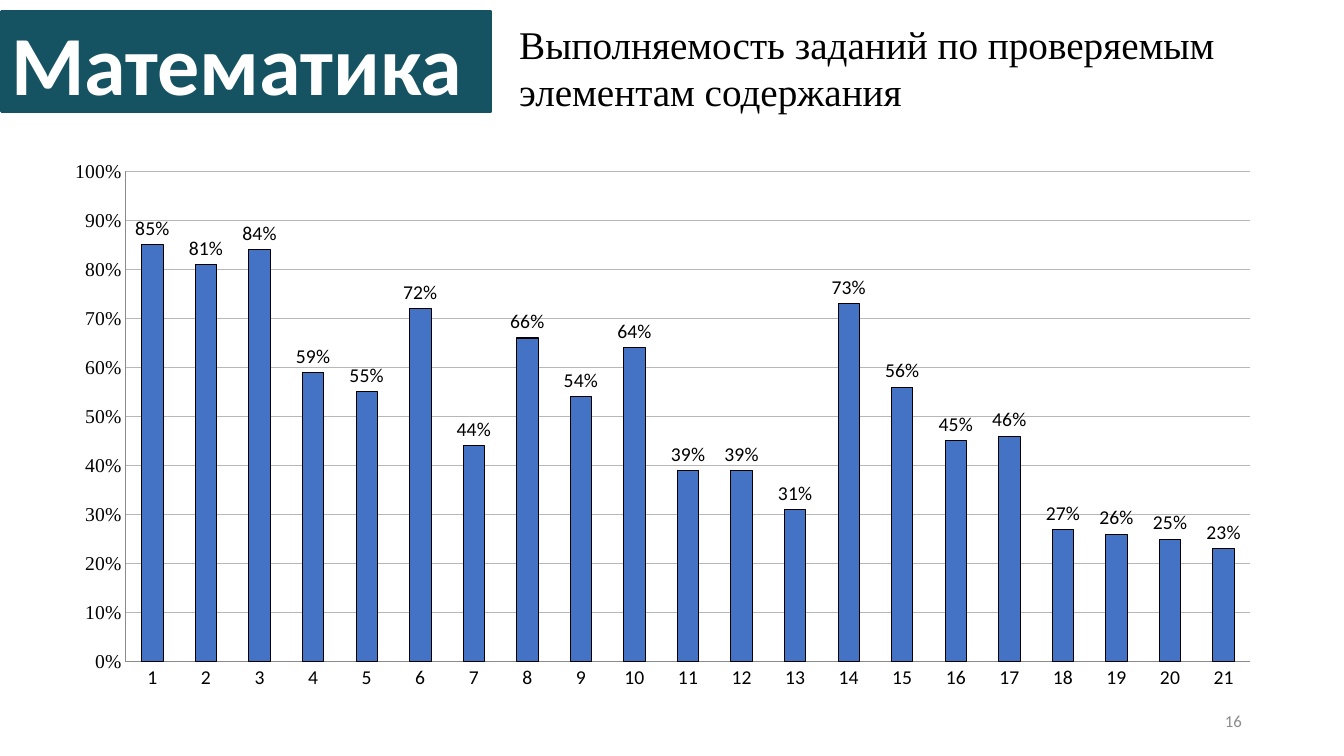
from lxml.etree import SubElement
from pptx import Presentation
from pptx.chart.data import CategoryChartData
from pptx.dml.color import RGBColor
from pptx.enum.chart import XL_CHART_TYPE, XL_LABEL_POSITION, XL_TICK_MARK
from pptx.enum.shapes import MSO_SHAPE
from pptx.enum.text import MSO_ANCHOR, MSO_AUTO_SIZE, PP_ALIGN
from pptx.oxml.ns import qn
from pptx.util import Cm, Pt

COLORS = {
    "black": "000000",
    "white": "FFFFFF",
    "teal": "155262",
    "bar": "4472C4",
    "grid": "B7B7B7",
    "axis": "8B8B8B",
    "number": "8C8C8C",
}
SANS = "Calibri"
SERIF = "Times New Roman"
RESULTS = [0.85, 0.81, 0.84, 0.59, 0.55, 0.72, 0.44, 0.66, 0.54, 0.64, 0.39,
           0.39, 0.31, 0.73, 0.56, 0.45, 0.46, 0.27, 0.26, 0.25, 0.23]
PLOT_AREA = {"x": 0.06, "y": 0.04, "w": 0.92, "h": 0.89}


def color(name):
    return RGBColor.from_string(COLORS[name])


def set_attributes(target, values):
    for name, value in values.items():
        setattr(target, name, value)


def format_font(font, size, family, color_name="black", bold=False):
    set_attributes(font, {"size": Pt(size), "name": family, "bold": bold})
    font.color.rgb = color(color_name)


def format_line(line, color_name, width):
    line.color.rgb = color(color_name)
    line.width = Pt(width)


def place(shape, left, top, width, height):
    set_attributes(shape, {"left": Cm(left), "top": Cm(top),
                           "width": Cm(width), "height": Cm(height)})


def write_text(shape, lines, size, family, color_name="black", bold=False,
               alignment=PP_ALIGN.LEFT, anchor=MSO_ANCHOR.MIDDLE):
    frame = shape.text_frame
    frame.text = "\n".join(lines)
    set_attributes(frame, {"word_wrap": True, "vertical_anchor": anchor,
                           "auto_size": MSO_AUTO_SIZE.NONE})
    for paragraph in frame.paragraphs:
        set_attributes(paragraph, {"alignment": alignment, "line_spacing": 1.0,
                                   "space_before": Pt(0)})
        format_font(paragraph.font, size, family, color_name, bold)


def add_heading(slide):
    title = slide.shapes.title
    place(title, 12.83, 0.38, 19.94, 2.64)
    write_text(title, ["Выполняемость заданий по проверяемым",
                       "элементам содержания"], 28, SERIF, anchor=MSO_ANCHOR.TOP)


def add_subject(slide):
    banner = slide.shapes.add_shape(
        MSO_SHAPE.RECTANGLE, Cm(0.03), Cm(0.28), Cm(12.32), Cm(2.54))
    banner.shadow.inherit = False
    banner.fill.solid()
    banner.fill.fore_color.rgb = color("teal")
    format_line(banner.line, "teal", 2.25)
    write_text(banner, ["Математика"], 60, SANS, "white", bold=True)


def add_page_number(slide):
    box = slide.shapes.add_textbox(Cm(23.93), Cm(17.65), Cm(7.62), Cm(1.02))
    write_text(box, ["16"], 12, SANS, "number", alignment=PP_ALIGN.RIGHT)


def format_axis(axis, family):
    set_attributes(axis, {"major_tick_mark": XL_TICK_MARK.NONE,
                          "minor_tick_mark": XL_TICK_MARK.NONE,
                          "has_title": False})
    format_font(axis.tick_labels.font, 14, family)
    format_line(axis.format.line, "axis", 0.75)


def fix_plot_area(chart):
    plot_area = chart.element.find(".//" + qn("c:plotArea"))
    layout = plot_area.find(qn("c:layout"))
    if layout is None:
        layout = SubElement(plot_area, qn("c:layout"))
        plot_area.insert(0, layout)
    manual = SubElement(layout, qn("c:manualLayout"))
    settings = {"layoutTarget": "inner", "xMode": "edge", "yMode": "edge", **PLOT_AREA}
    for name, value in settings.items():
        SubElement(manual, qn("c:" + name)).set("val", str(value))


def add_results_chart(slide):
    data = CategoryChartData(number_format="0%")
    data.categories = [str(number) for number in range(1, len(RESULTS) + 1)]
    data.add_series("Series 1", RESULTS)
    chart = slide.shapes.add_chart(
        XL_CHART_TYPE.COLUMN_CLUSTERED,
        Cm(1.32), Cm(3.76), Cm(30.81), Cm(13.89), data).chart
    set_attributes(chart, {"has_legend": False, "has_title": False})
    format_font(chart.font, 10, SANS)
    fix_plot_area(chart)

    format_axis(chart.category_axis, SANS)
    value_axis = chart.value_axis
    format_axis(value_axis, SERIF)
    set_attributes(value_axis, {"minimum_scale": 0, "maximum_scale": 1,
                                "major_unit": 0.1, "has_major_gridlines": True})
    set_attributes(value_axis.tick_labels, {"number_format": "0%",
                                            "number_format_is_linked": False})
    format_line(value_axis.major_gridlines.format.line, "grid", 0.75)

    plot = chart.plots[0]
    set_attributes(plot, {"gap_width": 150, "vary_by_categories": False,
                          "has_data_labels": True})
    labels = plot.data_labels
    set_attributes(labels, {"show_value": True, "number_format": "0%",
                            "number_format_is_linked": False,
                            "position": XL_LABEL_POSITION.OUTSIDE_END})
    format_font(labels.font, 14, SANS)
    bars = plot.series[0].format
    bars.fill.solid()
    bars.fill.fore_color.rgb = color("bar")
    format_line(bars.line, "black", 0.75)


def main():
    presentation = Presentation()
    set_attributes(presentation, {"slide_width": Cm(33.87), "slide_height": Cm(19.05)})
    slide = presentation.slides.add_slide(presentation.slide_layouts[5])
    add_heading(slide)
    add_subject(slide)
    add_page_number(slide)
    add_results_chart(slide)
    presentation.save("out.pptx")


if __name__ == "__main__":
    main()
